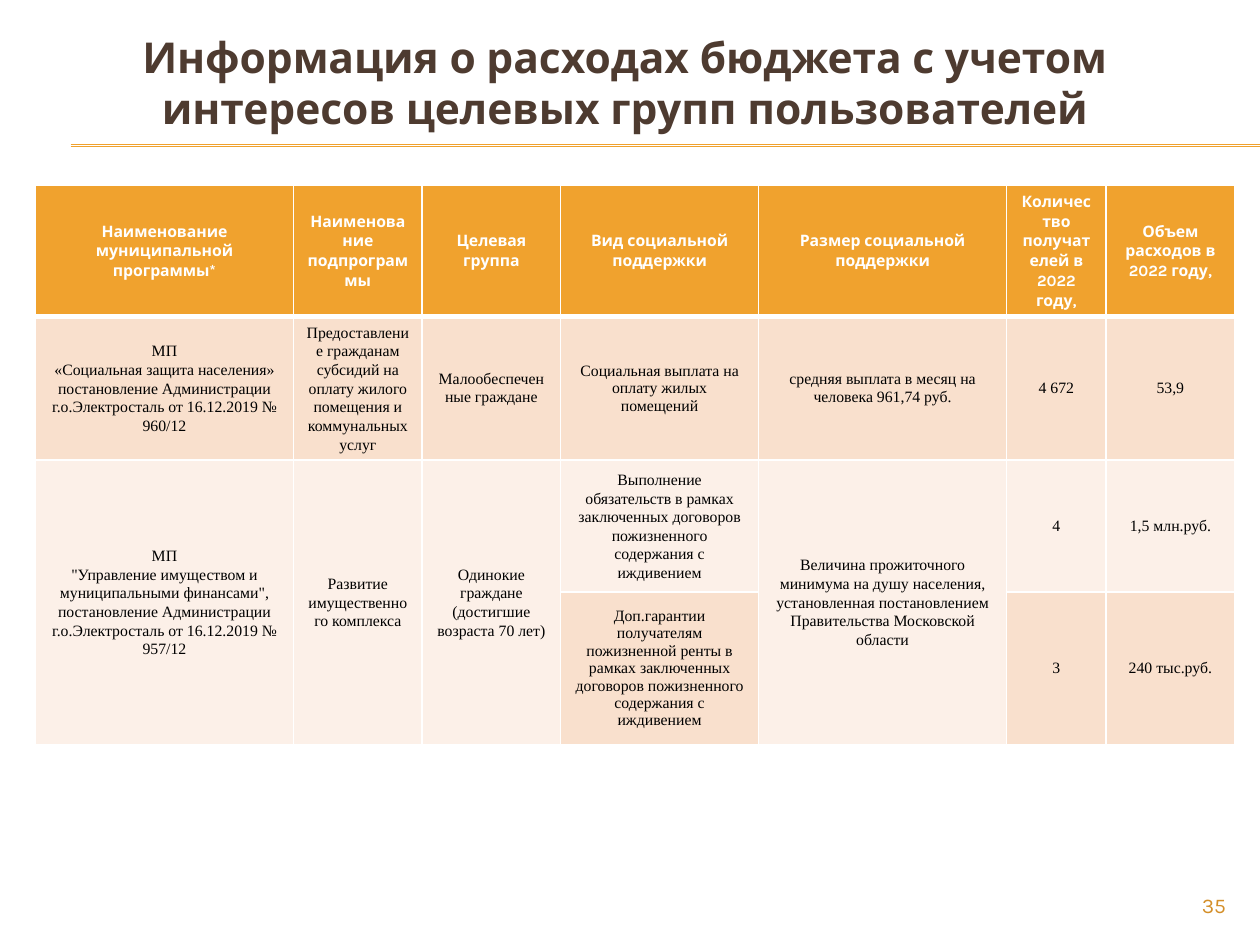
from dataclasses import dataclass

from lxml import etree
from pptx import Presentation
from pptx.dml.color import RGBColor
from pptx.enum.shapes import MSO_CONNECTOR
from pptx.enum.text import MSO_ANCHOR, PP_ALIGN
from pptx.oxml.ns import qn
from pptx.slide import Slide
from pptx.table import _Cell
from pptx.text.text import TextFrame
from pptx.util import Inches, Pt

MIDDLE, TOP = MSO_ANCHOR.MIDDLE, MSO_ANCHOR.TOP
CENTER, RIGHT = PP_ALIGN.CENTER, PP_ALIGN.RIGHT
STRAIGHT = MSO_CONNECTOR.STRAIGHT

WIDTH, HEIGHT = Inches(10), Inches(7.5)
COLORS = {
    "gold": "F0A22E", "number": "D48F29", "title": "4E3B30", "white": "FFFFFF",
    "black": "000000", "peach": "F9E0CD", "cream": "FCF0E8",
}
COLUMN_SHARES = (0.205, 0.102, 0.11, 0.157, 0.197, 0.079, 0.102)
ROW_SHARES = (0.117, 0.151, 0.14, 0.161)
RULE_SHARES = (0.1533, 0.1547)
SPACED = 1.07


@dataclass(frozen=True)
class Style:
    font: str
    size: float
    color: str
    bold: bool = False
    align: PP_ALIGN = CENTER


@dataclass(frozen=True)
class Label:
    text: str
    left: float
    top: float
    width: float
    height: float
    style: Style
    anchor: MSO_ANCHOR


@dataclass(frozen=True)
class Entry:
    row: int
    column: int
    text: str
    fill: str
    spacing: float = SPACED
    rows: int = 1


HEAD = Style("Karla", 9, "white", True)
BODY = Style("Times New Roman", 9, "black")

LABELS = (
    Label("Информация о расходах бюджета с учетом интересов целевых групп пользователей",
          0.031, 0.03, 0.93, 0.113, Style("Karla", 24.3, "title", True), MIDDLE),
    Label("35", 0.9, 0.944, 0.083, 0.036, Style("Karla", 12, "number", align=RIGHT), TOP),
)

HEADINGS = (
    "Наименование муниципальной программы*",
    "Наименование подпрограммы",
    "Целевая группа",
    "Вид социальной поддержки",
    "Размер социальной поддержки",
    "Количество получателей в 2022 году,",
    "Объем расходов в 2022 году,",
)

ENTRIES = (
    *(Entry(0, column, text, "gold") for column, text in enumerate(HEADINGS)),
    Entry(1, 0, "МП\n«Социальная защита населения» постановление Администрации "
          "г.о.Электросталь от 16.12.2019 № 960/12", "peach"),
    Entry(1, 1, "Предоставление гражданам субсидий на оплату жилого помещения "
          "и коммунальных услуг", "peach"),
    Entry(1, 2, "Малообеспеченные граждане", "peach", 1),
    Entry(1, 3, "Социальная выплата на оплату жилых помещений", "peach", 1),
    Entry(1, 4, "средняя выплата в месяц на человека 961,74 руб.", "peach", 1),
    Entry(1, 5, "4 672", "peach", 1),
    Entry(1, 6, "53,9", "peach", 1),
    Entry(2, 0, "МП\n\"Управление имуществом и муниципальными финансами\", "
          "постановление Администрации г.о.Электросталь от 16.12.2019 № 957/12",
          "cream", rows=2),
    Entry(2, 1, "Развитие имущественного комплекса", "cream", rows=2),
    Entry(2, 2, "Одинокие граждане (достигшие возраста 70 лет)", "cream", rows=2),
    Entry(2, 3, "Выполнение обязательств в рамках заключенных договоров "
          "пожизненного содержания с иждивением", "cream"),
    Entry(2, 4, "Величина прожиточного минимума на душу населения, установленная "
          "постановлением Правительства Московской области", "cream", rows=2),
    Entry(2, 5, "4", "cream"),
    Entry(2, 6, "1,5 млн.руб.", "cream"),
    Entry(3, 3, "Доп.гарантии получателям пожизненной ренты в рамках заключенных "
          "договоров пожизненного содержания с иждивением", "peach", 1),
    Entry(3, 5, "3", "peach", 1),
    Entry(3, 6, "240 тыс.руб.", "peach", 1),
)


def rgb(name: str) -> RGBColor:
    return RGBColor.from_string(COLORS[name])


def write(frame: TextFrame, text: str, style: Style, spacing: float = 1) -> None:
    frame.text = text
    formats = {"name": style.font, "size": Pt(style.size), "bold": style.bold}
    for para in frame.paragraphs:
        para.alignment = style.align
        para.line_spacing = spacing
        for span in para.runs:
            for name, value in formats.items():
                setattr(span.font, name, value)
            span.font.color.rgb = rgb(style.color)


def draw_rule(page: Slide, share: float) -> None:
    top = int(HEIGHT * share)
    rule = page.shapes.add_connector(STRAIGHT, int(WIDTH * 0.056), top, WIDTH, top)
    rule.line.color.rgb = rgb("gold")
    rule.line.width = Pt(0.75)
    etree.SubElement(rule.element.spPr, qn("a:effectLst"))


def draw_label(page: Slide, label: Label) -> None:
    box = page.shapes.add_textbox(
        int(WIDTH * label.left), int(HEIGHT * label.top),
        int(WIDTH * label.width), int(HEIGHT * label.height))
    frame = box.text_frame
    formats = {"word_wrap": True, "vertical_anchor": label.anchor,
               "margin_top": 0, "margin_bottom": 0}
    for name, value in formats.items():
        setattr(frame, name, value)
    write(frame, label.text, label.style)


def paint_cell(cell: _Cell, fill: str, bottom: float) -> None:
    properties = cell._tc.get_or_add_tcPr()
    for edge, points in {"lnL": 1, "lnR": 1, "lnT": 1, "lnB": bottom}.items():
        line = etree.SubElement(properties, qn(f"a:{edge}"), w=str(Pt(points)))
        solid = etree.SubElement(line, qn("a:solidFill"))
        etree.SubElement(solid, qn("a:srgbClr"), val=COLORS["white"])
    cell.fill.solid()
    cell.fill.fore_color.rgb = rgb(fill)


def draw_table(page: Slide) -> None:
    table = page.shapes.add_table(
        len(ROW_SHARES), len(COLUMN_SHARES), int(WIDTH * 0.028), int(HEIGHT * 0.196),
        int(WIDTH * sum(COLUMN_SHARES)), int(HEIGHT * sum(ROW_SHARES))).table
    for column, share in zip(table.columns, COLUMN_SHARES):
        column.width = int(WIDTH * share)
    for row, share in zip(table.rows, ROW_SHARES):
        row.height = int(HEIGHT * share)
    for entry in ENTRIES:
        cell = table.cell(entry.row, entry.column)
        last = entry.row + entry.rows
        for row in range(entry.row, last):
            paint_cell(table.cell(row, entry.column), entry.fill, 3 if row == 0 else 1)
        if entry.rows > 1:
            cell.merge(table.cell(last - 1, entry.column))
        cell.vertical_anchor = MIDDLE
        write(cell.text_frame, entry.text, BODY if entry.row else HEAD, entry.spacing)


def main() -> None:
    deck = Presentation()
    deck.slide_width, deck.slide_height = WIDTH, HEIGHT
    page = deck.slides.add_slide(deck.slide_layouts[6])
    for share in RULE_SHARES:
        draw_rule(page, share)
    draw_table(page)
    for label in LABELS:
        draw_label(page, label)
    deck.save("out.pptx")


if __name__ == "__main__":
    main()
